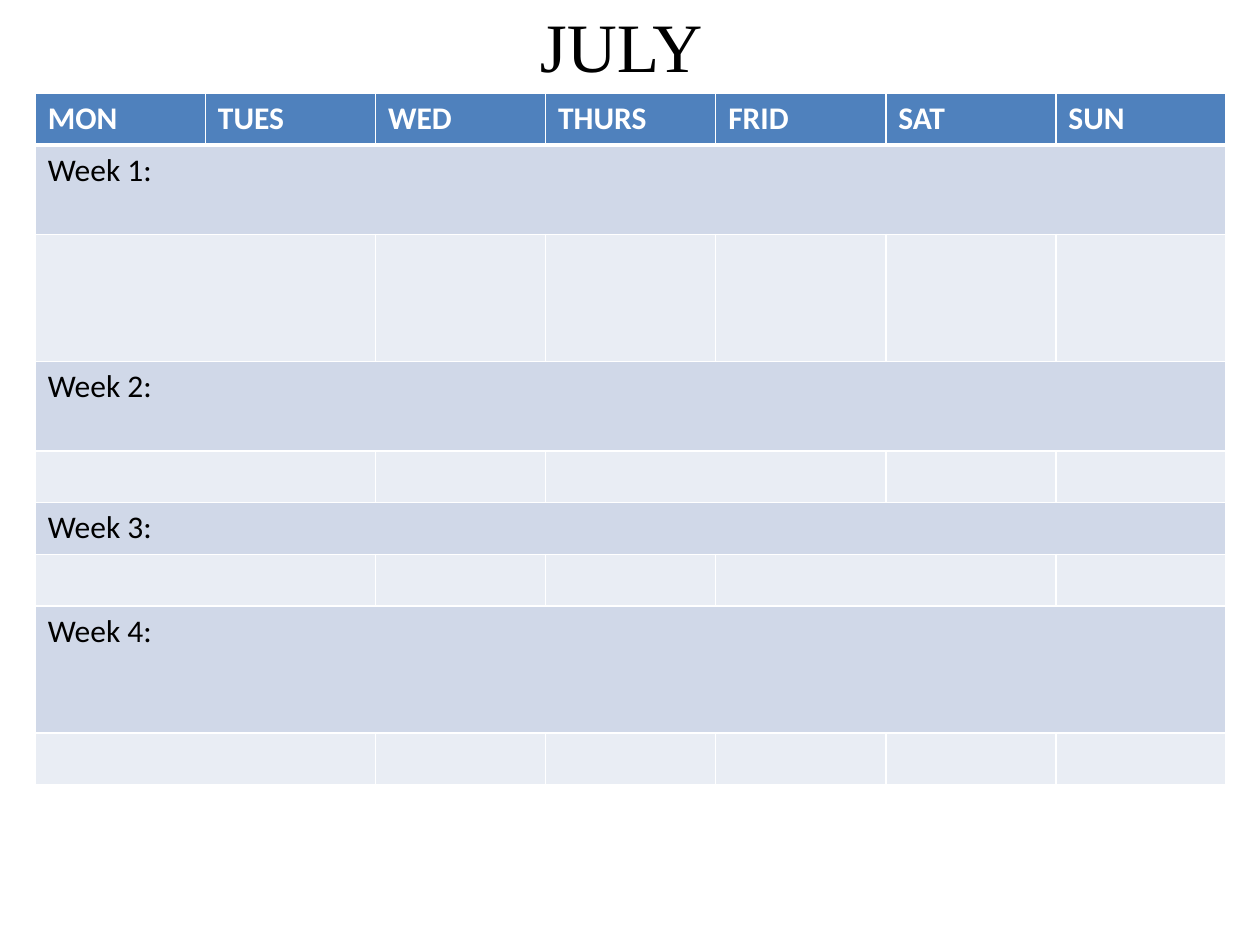
from lxml import etree
from pptx import Presentation
from pptx.dml.color import RGBColor
from pptx.enum.text import MSO_ANCHOR, PP_ALIGN
from pptx.oxml.ns import qn
from pptx.util import Inches, Pt

# Content
TITLE = "JULY"
DAYS = ["MON", "TUES", "WED", "THURS", "FRID", "SAT", "SUN"]
# Week label, label row height, day row height, first columns of merged day pairs
WEEKS = [
    ("Week 1:", 0.71, 1.01, [0]),
    ("Week 2:", 0.71, 0.41, [0, 3]),
    ("Week 3:", 0.41, 0.41, [0, 4]),
    ("Week 4:", 1.01, 0.41, [0]),
]
COLORS = {"header": "4F81BD", "week": "D0D8E8", "day": "E9EDF4",
          "white": "FFFFFF", "black": "000000"}
HEADER_HEIGHT = 0.41
COLUMN_WIDTH = 1.35


def write_text(text_frame, text, size=18, font="Calibri", color="black",
               bold=False, align=PP_ALIGN.LEFT):
    paragraph = text_frame.paragraphs[0]
    paragraph.alignment = align
    run = paragraph.add_run()
    run.text = text
    run.font.size = Pt(size)
    run.font.name = font
    run.font.bold = bold
    run.font.color.rgb = RGBColor.from_string(COLORS[color])


def format_cell(cell, fill, bottom=1):
    cell.fill.solid()
    cell.fill.fore_color.rgb = RGBColor.from_string(COLORS[fill])
    # Borders come before the fill in the cell properties
    properties = cell._tc.get_or_add_tcPr()
    widths = {"lnL": 1, "lnR": 1, "lnT": 1, "lnB": bottom}
    for index, (side, width) in enumerate(widths.items()):
        line = etree.Element(qn(f"a:{side}"), w=str(Pt(width)))
        line_fill = etree.SubElement(line, qn("a:solidFill"))
        etree.SubElement(line_fill, qn("a:srgbClr"), val=COLORS["white"])
        properties.insert(index, line)


def main():
    presentation = Presentation()
    presentation.slide_width = Inches(10)
    presentation.slide_height = Inches(7.5)
    slide = presentation.slides.add_slide(presentation.slide_layouts[5])

    # Title
    title = slide.shapes.title
    title.left, title.top = Inches(0.43), Inches(0)
    title.width, title.height = Inches(9), Inches(0.71)
    title.text_frame.vertical_anchor = MSO_ANCHOR.MIDDLE
    write_text(title.text_frame, TITLE, size=39.6, font="Times New Roman",
               align=PP_ALIGN.CENTER)

    # Calendar grid
    heights = [HEADER_HEIGHT]
    for _, label_height, day_height, _ in WEEKS:
        heights += [label_height, day_height]
    last = len(DAYS) - 1
    table = slide.shapes.add_table(
        len(heights), len(DAYS), Inches(0.28), Inches(0.74),
        Inches(COLUMN_WIDTH * len(DAYS)), Inches(sum(heights))).table
    for column in table.columns:
        column.width = Inches(COLUMN_WIDTH)
    for row, height in zip(table.rows, heights):
        row.height = Inches(height)

    # Header row
    for column, day in enumerate(DAYS):
        cell = table.cell(0, column)
        format_cell(cell, "header", bottom=3)
        write_text(cell.text_frame, day, color="white", bold=True)

    # Each week has a label row above a day row
    for week, (label, _, _, pairs) in enumerate(WEEKS):
        label_row = 1 + 2 * week
        day_row = label_row + 1
        for column in range(len(DAYS)):
            format_cell(table.cell(label_row, column), "week")
            format_cell(table.cell(day_row, column), "day")
        label_cell = table.cell(label_row, 0)
        label_cell.merge(table.cell(label_row, last))
        write_text(label_cell.text_frame, label)
        for first in pairs:
            table.cell(day_row, first).merge(table.cell(day_row, first + 1))

    presentation.save("out.pptx")


if __name__ == "__main__":
    main()
